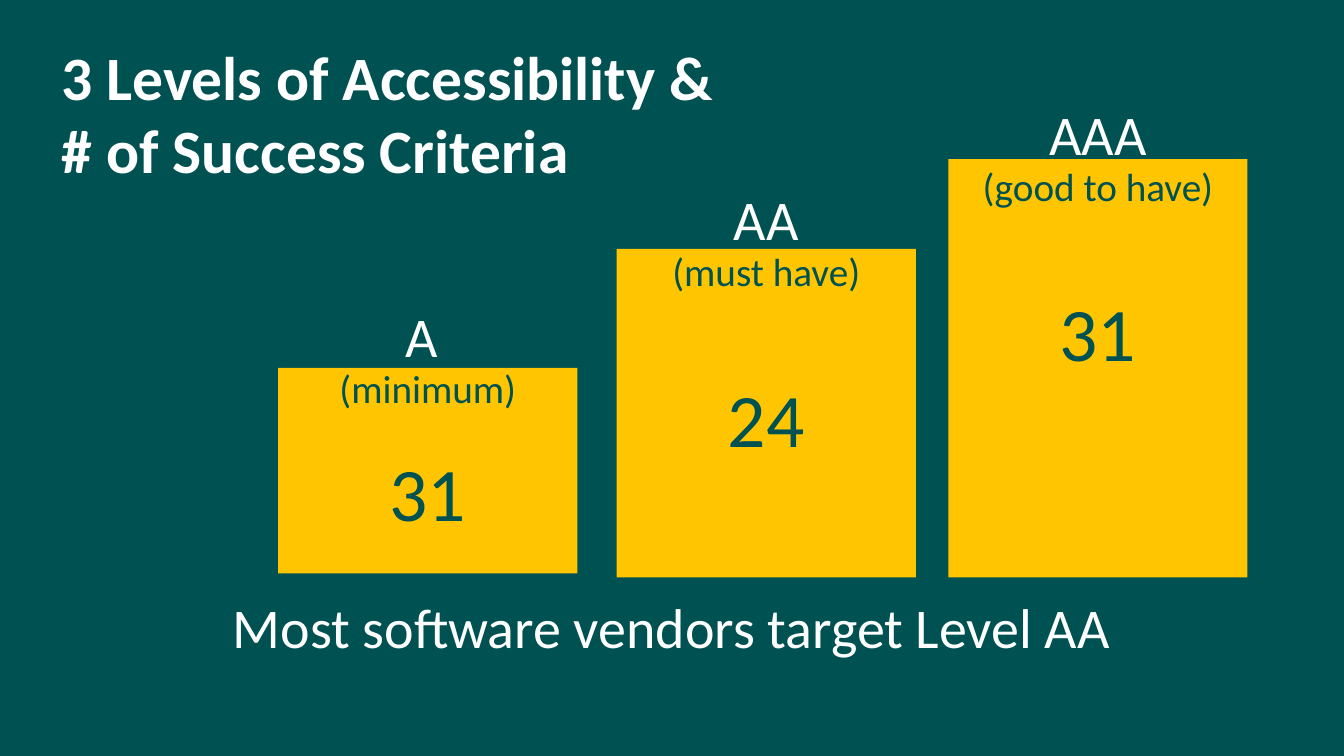
"""Build the slide on the three accessibility levels and their success criteria."""
from typing import NamedTuple

from pptx import Presentation
from pptx.dml.color import RGBColor
from pptx.enum.shapes import MSO_SHAPE as Preset
from pptx.enum.text import MSO_ANCHOR as Anchor, PP_ALIGN as Align
from pptx.util import Cm, Pt

COLOURS = {"teal": "005151", "gold": "FFC600", "white": "FFFFFF"}
BLOCK_WIDTH = 7.54
INSET_X, INSET_Y = 0.25, 0.13


class Frame(NamedTuple):
    left: float
    top: float
    width: float
    height: float

    def lengths(self) -> list[Cm]:
        return [Cm(value) for value in self]


class Line(NamedTuple):
    text: str
    size: int
    colour: str = "white"
    bold: bool = False
    gap: int = 0


class Level(NamedTuple):
    name: str
    advice: str
    criteria: int
    left: float
    block_top: float
    block_height: float
    label_top: float
    label_height: float
    anchor: Anchor
    gap: int


LEVELS = [
    Level("A ", "(minimum)", 31, 7.01, 9.27, 5.18, 8.08, 5.18, Anchor.MIDDLE, 31),
    Level("AA", "(must have)", 24, 15.54, 6.27, 8.28, 4.72, 2.92, Anchor.TOP, 62),
    Level("AAA", "(good to have)", 31, 23.9, 4.01, 10.54, 1.57, 9.09, Anchor.MIDDLE, 62),
]


def rgb(name: str) -> RGBColor:
    return RGBColor.from_string(COLOURS[name])


def add_text(slide, frame: Frame, lines: list[Line], align: Align, anchor: Anchor,
             spacing: float = 1.0, inset_x: float = 0, inset_y: float = 0) -> None:
    text_frame = slide.shapes.add_textbox(*frame.lengths()).text_frame
    frame_format = {
        "word_wrap": True,
        "vertical_anchor": anchor,
        "margin_left": Cm(inset_x),
        "margin_right": Cm(inset_x),
        "margin_top": Cm(inset_y),
        "margin_bottom": Cm(inset_y),
    }
    for attribute, value in frame_format.items():
        setattr(text_frame, attribute, value)
    for index, line in enumerate(lines):
        paragraph = text_frame.add_paragraph() if index else text_frame.paragraphs[0]
        paragraph_format = {"alignment": align, "line_spacing": spacing,
                            "space_before": Pt(line.gap)}
        for attribute, value in paragraph_format.items():
            setattr(paragraph, attribute, value)
        run = paragraph.add_run()
        run.text = line.text
        font_format = {"name": "Calibri", "size": Pt(line.size), "bold": line.bold}
        for attribute, value in font_format.items():
            setattr(run.font, attribute, value)
        run.font.color.rgb = rgb(line.colour)


def add_level(slide, level: Level) -> None:
    block_frame = Frame(level.left, level.block_top, BLOCK_WIDTH, level.block_height)
    block = slide.shapes.add_shape(Preset.RECTANGLE, *block_frame.lengths())
    block.shadow.inherit = False
    block.fill.solid()
    block.fill.fore_color.rgb = rgb("gold")
    block.line.fill.background()
    label_frame = Frame(level.left, level.label_top, BLOCK_WIDTH, level.label_height)
    label = [
        Line(level.name, 40),
        Line(level.advice, 28, "teal"),
        Line(str(level.criteria), 54, "teal", gap=level.gap),
    ]
    add_text(slide, label_frame, label, Align.CENTER, level.anchor, 0.9, INSET_X, INSET_Y)


def main() -> None:
    deck = Presentation()
    deck.slide_width, deck.slide_height = Cm(33.87), Cm(19.05)
    slide = deck.slides.add_slide(deck.slide_layouts[6])
    slide.background.fill.solid()
    slide.background.fill.fore_color.rgb = rgb("teal")

    title = [Line("3 Levels of Accessibility &", 44, bold=True),
             Line("# of Success Criteria", 44, bold=True)]
    add_text(slide, Frame(1.55, 0.97, 30.73, 2.18), title, Align.LEFT, Anchor.TOP)
    for level in LEVELS:
        add_level(slide, level)
    takeaway = [Line("Most software vendors target Level AA ", 40)]
    add_text(slide, Frame(1.7, 14.68, 30.76, 2.21), takeaway, Align.CENTER, Anchor.MIDDLE)

    deck.save("out.pptx")


if __name__ == "__main__":
    main()
